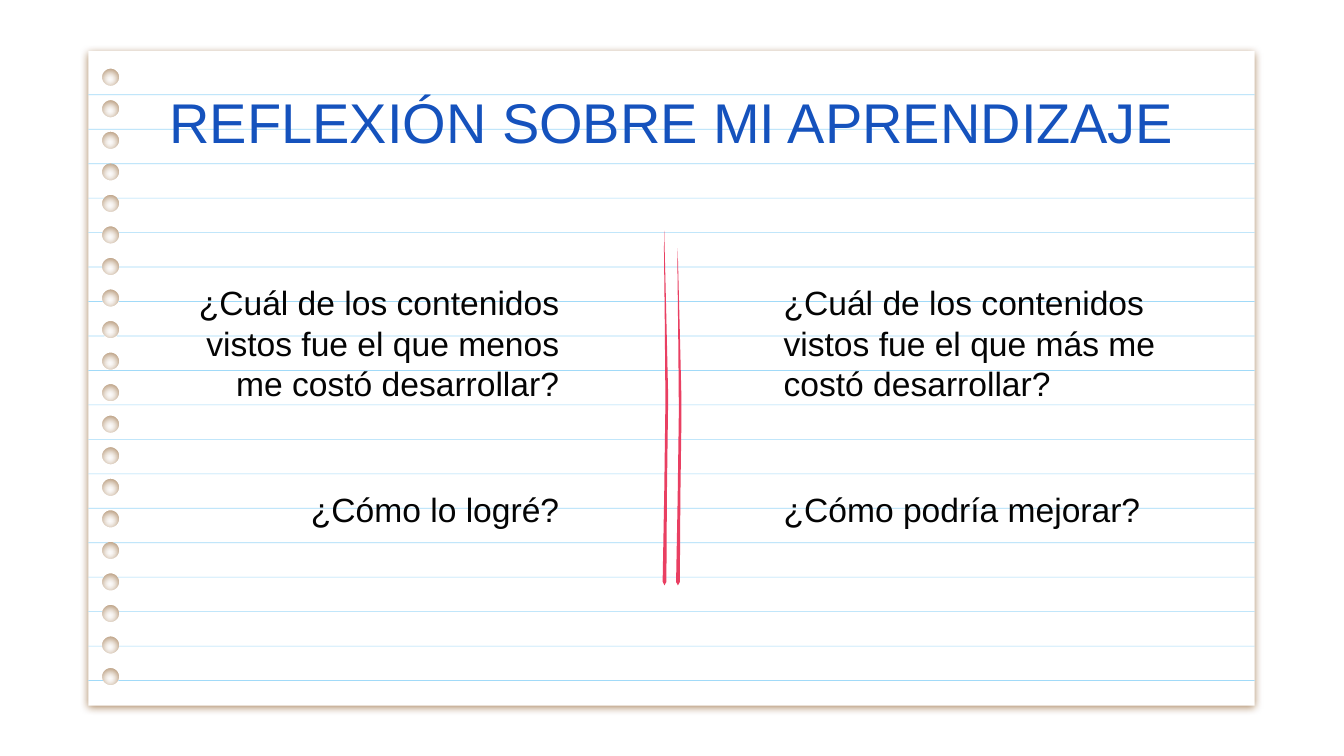
from math import cos, pi, sin, sqrt
from lxml.etree import SubElement
from pptx import Presentation
from pptx.dml.color import RGBColor
from pptx.enum.shapes import MSO_SHAPE
from pptx.enum.text import MSO_ANCHOR, MSO_AUTO_SIZE, PP_ALIGN
from pptx.oxml.ns import qn
from pptx.util import Pt

FRAME = {
    "word_wrap": True, "auto_size": MSO_AUTO_SIZE.NONE, "vertical_anchor": MSO_ANCHOR.TOP,
    "margin_left": Pt(7.2), "margin_right": Pt(7.2),
    "margin_top": Pt(7.2), "margin_bottom": Pt(7.2),
}
STROKE = [
    (0.3, 0), (0.7, 0.25), (1, 0.45), (1, 0.5), (0.8, 0.74), (0.7, 0.99), (0.35, 1),
    (0, 0.99), (0.3, 0.74), (0.5, 0.5), (0.5, 0.45), (0.4, 0.25), (0.25, 0.05),
]


def tint(code):
    return RGBColor.from_string(code)


def put(item, values):
    for name, value in values.items():
        setattr(item, name, value)


def paint(shape, code):
    shape.shadow.inherit = False
    shape.fill.solid()
    shape.fill.fore_color.rgb = tint(code)
    shape.line.fill.background()


def outline(shapes, rings, code):
    rings = [[(Pt(x), Pt(y)) for x, y in ring] for ring in rings]
    pen = shapes.build_freeform(*rings[0][0], scale=1.0)
    pen.add_line_segments(rings[0][1:], close=True)
    for ring in rings[1:]:
        pen.move_to(*ring[0])
        pen.add_line_segments(ring[1:], close=True)
    shape = pen.convert_to_shape()
    paint(shape, code)
    return shape


def circle(x, y, radius, steps=32):
    turns = [2 * pi * i / steps for i in range(steps)]
    return [(x + radius * cos(t), y + radius * sin(t)) for t in turns]


def shade(shape):
    effects = shape.element.spPr.find(qn("a:effectLst"))
    cast = SubElement(effects, qn("a:outerShdw"), blurRad=str(Pt(4.5)),
                      dist=str(Pt(1.5)), dir="5400000", algn="bl", rotWithShape="0")
    color = SubElement(cast, qn("a:srgbClr"), val="783F04")
    SubElement(color, qn("a:alpha"), val="61000")


def draw_page(shapes, left, top, width, height):
    right, bottom = left + width, top + height
    hole, radius = left + 11.9, 4.6
    rows = [top + 14 + 16.9 * i for i in range(20)]
    edge = [(left, top), (left, bottom), (right, bottom), (right, top)]
    shade(outline(shapes, [circle(hole, y, radius) for y in rows] + [edge], "FFFFFF"))
    for i in range(18):
        y = top + 23.2 + 18.46 * i
        gap = min(abs(y - row) for row in rows)
        spans = [(left, right)]
        if gap < radius:
            half = sqrt(radius ** 2 - gap ** 2)
            spans = [(left, hole - half), (hole + half, right)]
        for start, end in spans:
            rule = shapes.add_shape(MSO_SHAPE.RECTANGLE, Pt(start), Pt(y),
                                    Pt(end - start), Pt(0.36))
            paint(rule, "A1DAF8")


def write(holder, box, text, size, lead, align, code):
    put(holder, dict(zip(("left", "top", "width", "height"), map(Pt, box))))
    holder.element.getparent().append(holder.element)
    frame = holder.text_frame
    frame.text = text
    put(frame, FRAME)
    para = frame.paragraphs[0]
    props = para._p.get_or_add_pPr()
    put_xml = {"marL": "0", "indent": "0"}
    for name, value in put_xml.items():
        props.set(name, value)
    SubElement(props, qn("a:buNone"))
    put(para, {"alignment": align, "line_spacing": Pt(lead), "space_before": Pt(0)})
    put(para.font, {"name": "Arial", "size": Pt(size), "bold": False})
    para.font.color.rgb = tint(code)


def fill_column(holders, texts, left, top, width, align):
    for i, (holder, text) in enumerate(zip(holders, texts)):
        box = (left, top + 110.9 * i, width, 69)
        write(holder, box, text, 18, 21.6, align, "040404")


def draw_strokes(shapes, left, top, height):
    for x, y in ((left, top), (left + 7.2, top + 9.3)):
        tall = top + height - y
        ring = [(x + 2.9 * u, y + tall * v) for u, v in STROKE]
        outline(shapes, [ring], "E93F62")


def main():
    deck = Presentation()
    put(deck, {"slide_width": Pt(720), "slide_height": Pt(405)})
    slide = deck.slides.add_slide(deck.slide_layouts[4])
    shapes = slide.shapes
    title, *bodies = list(slide.placeholders)
    draw_page(shapes, 47.4, 27.4, 624.8, 350.6)
    write(title, (70.6, 38.9, 578.9, 49.7), "REFLEXIÓN SOBRE MI APRENDIZAJE",
          30, 36.6, PP_ALIGN.CENTER, "1552BD")
    fill_column(bodies[:2], (
        "¿Cuál de los contenidos vistos fue el que menos me costó desarrollar?",
        "¿Cómo lo logré?"), 92.2, 144, 214.6, PP_ALIGN.RIGHT)
    fill_column(bodies[2:], (
        "¿Cuál de los contenidos vistos fue el que más me costó desarrollar?",
        "¿Cómo podría mejorar?"), 412.6, 144, 214.6, PP_ALIGN.LEFT)
    draw_strokes(shapes, 355, 123.6, 190)
    deck.save("out.pptx")


if __name__ == "__main__":
    main()
